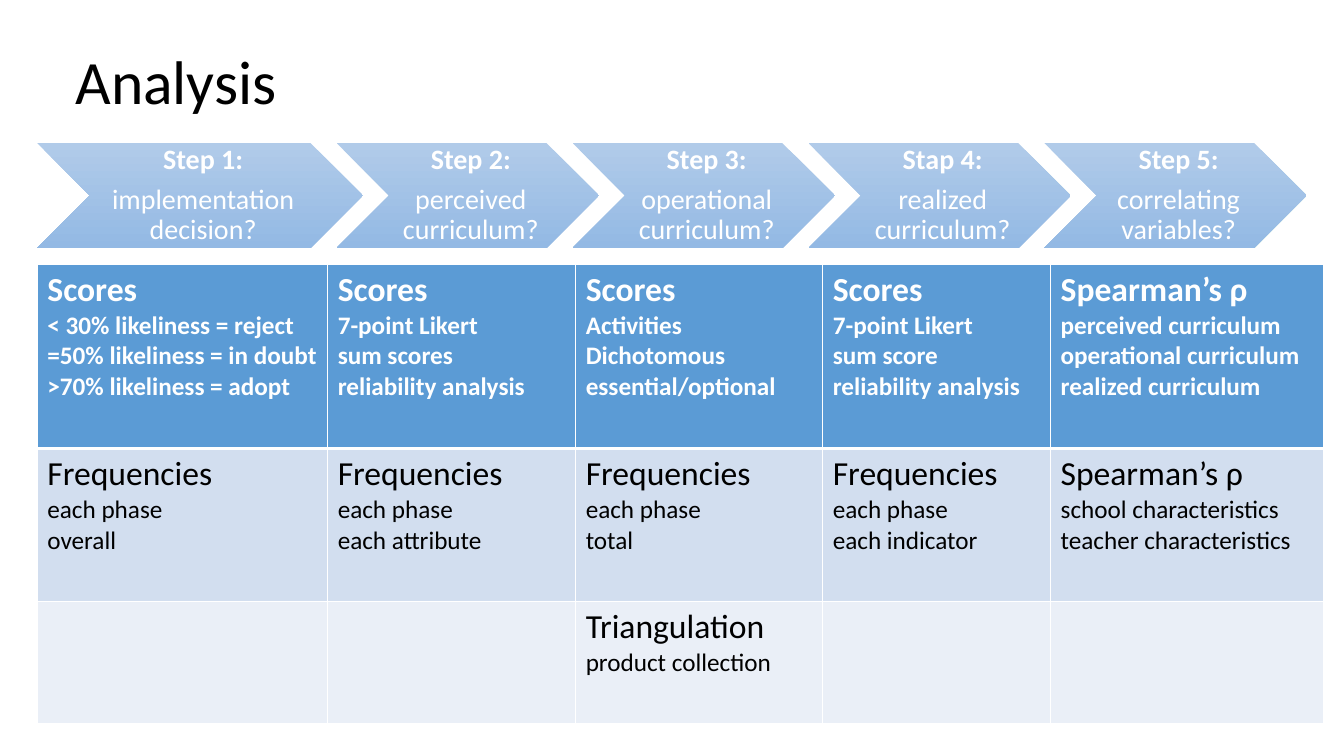
"""Build the Analysis slide: five step chevrons above a table of measures."""
from lxml.etree import SubElement
from pptx import Presentation
from pptx.dml.color import RGBColor
from pptx.enum.shapes import MSO_SHAPE
from pptx.enum.text import MSO_ANCHOR, PP_ALIGN
from pptx.oxml.ns import qn
from pptx.util import Inches, Pt

WHITE = RGBColor(0xFF, 0xFF, 0xFF)
BLACK = RGBColor(0x00, 0x00, 0x00)
CHEVRON_TOP = RGBColor(0xB1, 0xCB, 0xE9)
CHEVRON_BOTTOM = RGBColor(0x93, 0xB9, 0xE4)
ROW_FILLS = [RGBColor(0x5B, 0x9B, 0xD5), RGBColor(0xD2, 0xDE, 0xEF), RGBColor(0xEA, 0xEF, 0xF7)]

LEFT = 0.37
STEP_TOP, STEP_HEIGHT, STEP_OVERLAP = 1.42, 1.04, 0.26
STEP_WIDTHS = [3.23] + [2.6] * 4
COLUMN_WIDTHS = [2.88, 2.46, 2.45, 2.26, 2.71]
ROW_HEIGHTS = [1.83, 1.52, 1.21]

STEPS = [
    ("Step 1:", "implementation decision?"),
    ("Step 2:", "perceived curriculum?"),
    ("Step 3:", "operational curriculum?"),
    ("Stap 4:", "realized curriculum?"),
    ("Step 5:", "correlating variables?"),
]
MEASURES = [
    [
        ["Scores", "< 30% likeliness = reject", "=50% likeliness = in doubt", ">70% likeliness = adopt"],
        ["Scores", "7-point Likert", "sum scores", "reliability analysis"],
        ["Scores", "Activities", "Dichotomous", "essential/optional"],
        ["Scores", "7-point Likert", "sum score", "reliability analysis"],
        ["Spearman’s ρ", "perceived curriculum", "operational curriculum", "realized curriculum"],
    ],
    [
        ["Frequencies", "each phase", "overall"],
        ["Frequencies", "each phase", "each attribute"],
        ["Frequencies", "each phase", "total"],
        ["Frequencies", "each phase", "each indicator"],
        ["Spearman’s ρ", "school characteristics", "teacher characteristics"],
    ],
    [[], [], ["Triangulation", "product collection"], [], []],
]


def add_line(frame, index, text, size, color, bold=False):
    paragraph = frame.add_paragraph() if index else frame.paragraphs[0]
    run = paragraph.add_run()
    run.text = text
    run.font.name = "Calibri"
    run.font.size = Pt(size)
    run.font.bold = bold
    run.font.color.rgb = color
    return paragraph


def add_border(cell, side, width):
    line = SubElement(cell._tc.get_or_add_tcPr(), qn(f"a:{side}"), w=str(Pt(width)))
    SubElement(SubElement(line, qn("a:solidFill")), qn("a:srgbClr"), val=str(WHITE))


deck = Presentation()
deck.slide_width, deck.slide_height = Inches(13.33), Inches(7.5)
slide = deck.slides.add_slide(deck.slide_layouts[6])

heading = slide.shapes.add_textbox(Inches(0.65), Inches(0.11), Inches(11.5), Inches(1.45)).text_frame
heading.word_wrap = True
heading.vertical_anchor = MSO_ANCHOR.MIDDLE
add_line(heading, 0, "Analysis", 44, BLACK).line_spacing = 0.9

step_left = LEFT
for step, width in zip(STEPS, STEP_WIDTHS):
    chevron = slide.shapes.add_shape(
        MSO_SHAPE.CHEVRON, Inches(step_left), Inches(STEP_TOP), Inches(width), Inches(STEP_HEIGHT))
    chevron.shadow.inherit = False
    chevron.line.fill.background()
    chevron.fill.gradient()
    chevron.fill.gradient_angle = 270
    for stop, color in zip(chevron.fill.gradient_stops, (CHEVRON_TOP, CHEVRON_BOTTOM)):
        stop.color.rgb = color
    label = chevron.text_frame
    label.word_wrap = True
    label.vertical_anchor = MSO_ANCHOR.MIDDLE
    label.margin_left = Inches(0.09)
    label.margin_top = label.margin_right = label.margin_bottom = Inches(0.03)
    for index, text in enumerate(step):
        paragraph = add_line(label, index, text, 20, WHITE, bold=index == 0)
        paragraph.alignment = PP_ALIGN.CENTER
        paragraph.line_spacing = 0.9
        paragraph.space_after = Pt(7)
    step_left += width - STEP_OVERLAP

measures = slide.shapes.add_table(
    len(ROW_HEIGHTS), len(COLUMN_WIDTHS), Inches(LEFT), Inches(2.62),
    Inches(sum(COLUMN_WIDTHS)), Inches(sum(ROW_HEIGHTS))).table
measures.horz_banding = False
for column, width in zip(measures.columns, COLUMN_WIDTHS):
    column.width = Inches(width)
for row_index, (row, height) in enumerate(zip(measures.rows, ROW_HEIGHTS)):
    row.height = Inches(height)
    is_header = row_index == 0
    for cell, lines in zip(row.cells, MEASURES[row_index]):
        for side in ("lnL", "lnR", "lnT", "lnB"):
            heavy = (side == "lnB" and is_header) or (side == "lnT" and row_index == 1)
            add_border(cell, side, 3 if heavy else 1)
        cell.fill.solid()
        cell.fill.fore_color.rgb = ROW_FILLS[row_index]
        for index, text in enumerate(lines):
            add_line(cell.text_frame, index, text, 18 if index else 24,
                     WHITE if is_header else BLACK, bold=is_header)

deck.save("out.pptx")
